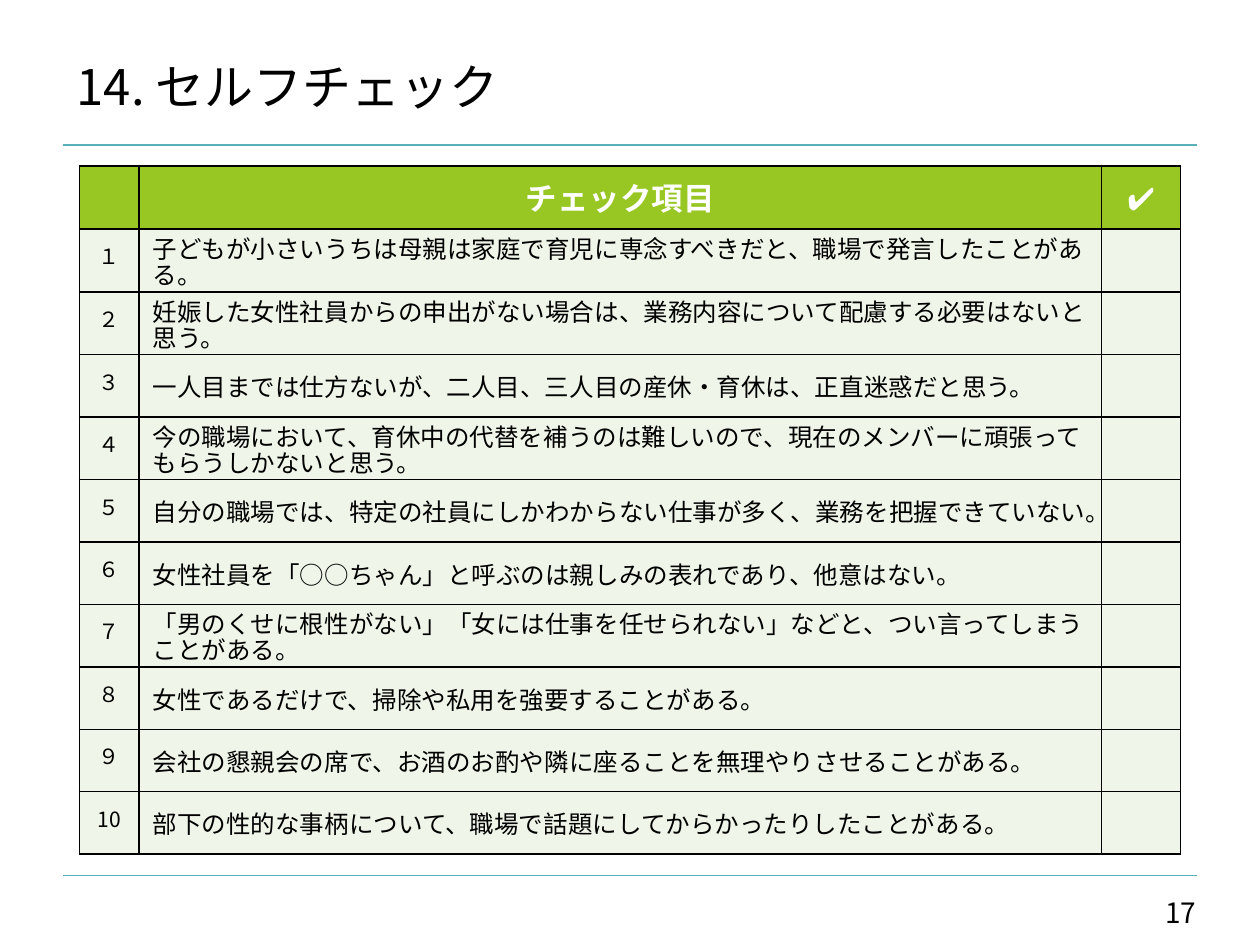
from lxml import etree
from pptx import Presentation
from pptx.dml.color import RGBColor
from pptx.enum.shapes import MSO_CONNECTOR
from pptx.enum.text import MSO_ANCHOR, PP_ALIGN
from pptx.oxml.ns import qn
from pptx.util import Pt

LEFT, CENTER = PP_ALIGN.LEFT, PP_ALIGN.CENTER
MIDDLE = MSO_ANCHOR.MIDDLE
STRAIGHT = MSO_CONNECTOR.STRAIGHT

FONT = "Noto Sans CJK JP"
BLACK, WHITE = "000000", "FFFFFF"
TEAL, GREEN, PALE_GREEN = "59B0B9", "98C723", "EFF5E8"

CHECK_ITEMS = [
    ("１", "子どもが小さいうちは母親は家庭で育児に専念すべきだと、職場で発言したことがある。"),
    ("２", "妊娠した女性社員からの申出がない場合は、業務内容について配慮する必要はないと思う。"),
    ("３", "一人目までは仕方ないが、二人目、三人目の産休・育休は、正直迷惑だと思う。"),
    ("４", "今の職場において、育休中の代替を補うのは難しいので、現在のメンバーに頑張ってもらうしかないと思う。"),
    ("５", "自分の職場では、特定の社員にしかわからない仕事が多く、業務を把握できていない。"),
    ("６", "女性社員を「○○ちゃん」と呼ぶのは親しみの表れであり、他意はない。"),
    ("７", "「男のくせに根性がない」「女には仕事を任せられない」などと、つい言ってしまうことがある。"),
    ("８", "女性であるだけで、掃除や私用を強要することがある。"),
    ("９", "会社の懇親会の席で、お酒のお酌や隣に座ることを無理やりさせることがある。"),
    ("10", "部下の性的な事柄について、職場で話題にしてからかったりしたことがある。"),
]


def color(hex_string):
    return RGBColor.from_string(hex_string)


def write(frame, text, size, align=LEFT, ink=BLACK, bold=False, spacing=None):
    frame.text = text
    paragraph = frame.paragraphs[0]
    paragraph.alignment = align
    if spacing:
        paragraph.line_spacing = Pt(spacing)
    for run in paragraph.runs:
        font = run.font
        font.size, font.bold, font.name = Pt(size), bold, FONT
        font.color.rgb = color(ink)
        # Japanese glyphs take the East Asian typeface
        latin = run._r.rPr.find(qn("a:latin"))
        latin.addnext(latin.makeelement(qn("a:ea"), {"typeface": FONT}))


def add_title(slide, left, top, width, height):
    title = slide.shapes.title
    title.left, title.top = Pt(left), Pt(top)
    title.width, title.height = Pt(width), Pt(height)
    title.text_frame.vertical_anchor = MIDDLE
    write(title.text_frame, "14. セルフチェック", 28)


def add_rule(slide, left, top, width):
    rule = slide.shapes.add_connector(
        STRAIGHT, Pt(left), Pt(top), Pt(left + width), Pt(top))
    rule.line.color.rgb = color(TEAL)
    rule.line.width = Pt(0.75)
    etree.SubElement(rule._element.spPr, qn("a:effectLst"))


def style_cell(cell, fill, top_inset=3.6, bottom_inset=3.6):
    cell.margin_left = cell.margin_right = Pt(7.9)
    cell.margin_top, cell.margin_bottom = Pt(top_inset), Pt(bottom_inset)
    cell.vertical_anchor = MIDDLE
    cell.fill.solid()
    cell.fill.fore_color.rgb = color(fill)
    # Borders come before the fill in the cell properties
    properties = cell._tc.get_or_add_tcPr()
    for index, side in enumerate(("a:lnL", "a:lnR", "a:lnT", "a:lnB")):
        border = properties.makeelement(qn(side), {"w": str(Pt(1))})
        solid = etree.SubElement(border, qn("a:solidFill"))
        etree.SubElement(solid, qn("a:srgbClr"), val=BLACK)
        properties.insert(index, border)


def add_checklist(slide, left, top, width, height):
    number_width, check_width, header_height = 34, 45.3, 36
    row_height = (height - header_height) / len(CHECK_ITEMS)
    table = slide.shapes.add_table(
        len(CHECK_ITEMS) + 1, 3, Pt(left), Pt(top), Pt(width), Pt(height)).table
    widths = (number_width, width - number_width - check_width, check_width)
    for column, column_width in zip(table.columns, widths):
        column.width = Pt(column_width)

    # Header row
    table.rows[0].height = Pt(header_height)
    for index, heading in enumerate(("", "チェック項目", "✔")):
        cell = table.cell(0, index)
        style_cell(cell, GREEN)
        write(cell.text_frame, heading, 18, CENTER, WHITE, True, 25)

    # Numbered items, each with an empty box to tick
    for row, (number, item) in enumerate(CHECK_ITEMS, start=1):
        table.rows[row].height = Pt(row_height)
        number_cell, item_cell, tick_cell = (table.cell(row, c) for c in range(3))
        style_cell(number_cell, PALE_GREEN)
        write(number_cell.text_frame, number, 12, CENTER, spacing=12)
        style_cell(item_cell, PALE_GREEN, 5.8, 0)
        write(item_cell.text_frame, item, 14, spacing=15)
        style_cell(tick_cell, PALE_GREEN)


def add_page_number(slide, left, top, width, height):
    frame = slide.shapes.add_textbox(
        Pt(left), Pt(top), Pt(width), Pt(height)).text_frame
    frame.word_wrap = True
    frame.vertical_anchor = MIDDLE
    write(frame, "17", 16, CENTER)


def main():
    presentation = Presentation()
    presentation.slide_width, presentation.slide_height = Pt(720), Pt(540)
    slide = presentation.slides.add_slide(presentation.slide_layouts[5])
    for rule_top in (82.8, 500.4):
        add_rule(slide, 36, rule_top, 648)
    add_title(slide, 36.7, 18, 648, 62.6)
    add_checklist(slide, 45.4, 95, 629.3, 392.4)
    add_page_number(slide, 637.9, 502.6, 73.4, 37.4)
    presentation.save("out.pptx")


if __name__ == "__main__":
    main()
